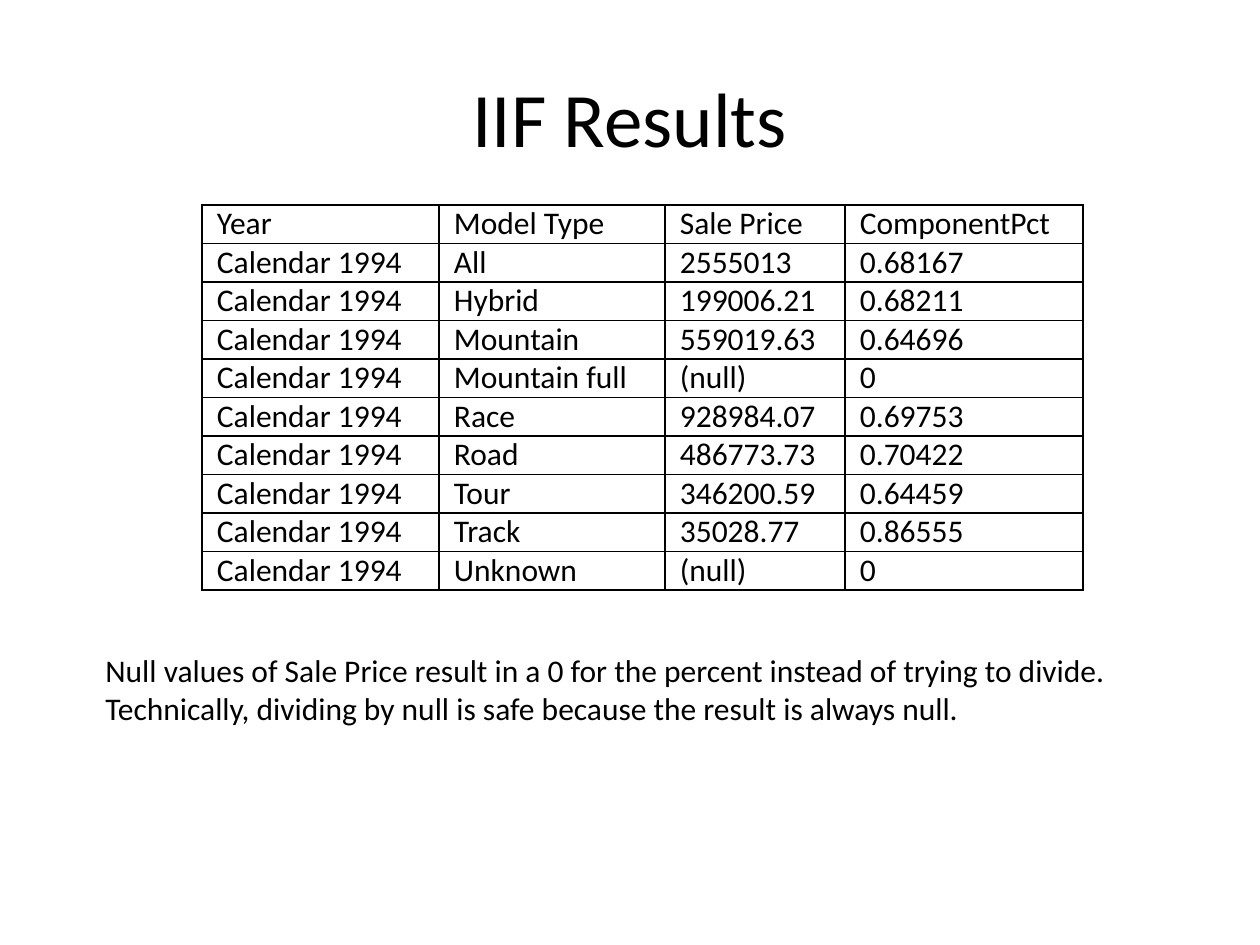
from lxml import etree
from pptx import Presentation, util as u
from pptx.dml.color import RGBColor
from pptx.enum import text
from pptx.oxml.ns import qn

# Content
TITLE = "IIF Results"
YEAR = "Calendar 1994"
HEADER = ("Year", "Model Type", "Sale Price", "ComponentPct")
MODELS = [
    ("All", "2555013", "0.68167"),
    ("Hybrid", "199006.21", "0.68211"),
    ("Mountain", "559019.63", "0.64696"),
    ("Mountain full", "(null)", "0"),
    ("Race", "928984.07", "0.69753"),
    ("Road", "486773.73", "0.70422"),
    ("Tour", "346200.59", "0.64459"),
    ("Track", "35028.77", "0.86555"),
    ("Unknown", "(null)", "0"),
]
NOTES = [
    "Null values of Sale Price result in a 0 for the percent instead of trying to divide.",
    "Technically, dividing by null is safe because the result is always null.",
]

# Layout in px, and formats
PX = u.Inches(1) // 126
SLIDE_SIZE = (1260, 945)
TITLE_BOX = (63, 38, 1134, 157)
TABLE_AT = (202, 205)
COLUMNS = (237, 226, 180, 238)
ROW_HEIGHT = 37
NOTES_BOX = (93, 645, 1032, 90)
COLORS = {"ink": "000000"}
FONT = "Calibri"
CELL_FORMAT = {"margin_left": 15 * PX, "margin_right": 15 * PX,
               "margin_top": 0, "margin_bottom": 0}


def px(values):
    return [value * PX for value in values]


def write(frame, lines, size, alignment=text.PP_ALIGN.LEFT):
    frame.text = "\n".join(lines)
    for paragraph in frame.paragraphs:
        paragraph.alignment = alignment
        font = paragraph.runs[0].font
        for name, value in {"name": FONT, "size": u.Pt(size)}.items():
            setattr(font, name, value)
        font.color.rgb = RGBColor.from_string(COLORS["ink"])


def add_borders(cell):
    properties = cell._tc.get_or_add_tcPr()
    for position, side in enumerate(("lnL", "lnR", "lnT", "lnB")):
        line = etree.Element(qn(f"a:{side}"), w=str(u.Pt(1)))
        fill = etree.SubElement(line, qn("a:solidFill"))
        etree.SubElement(fill, qn("a:srgbClr"), val=COLORS["ink"])
        properties.insert(position, line)


presentation = Presentation()
presentation.slide_width, presentation.slide_height = px(SLIDE_SIZE)
slide = presentation.slides.add_slide(presentation.slide_layouts[5])

# Title
title = slide.shapes.title
title.left, title.top, title.width, title.height = px(TITLE_BOX)
title.text_frame.vertical_anchor = text.MSO_ANCHOR.MIDDLE
write(title.text_frame, [TITLE], 44, text.PP_ALIGN.CENTER)

# Results table
rows = [HEADER] + [(YEAR, *model) for model in MODELS]
table_size = (sum(COLUMNS), ROW_HEIGHT * len(rows))
table = slide.shapes.add_table(
    len(rows), len(COLUMNS), *px(TABLE_AT + table_size)).table
table.first_row = table.horz_banding = False
for column, width in zip(table.columns, px(COLUMNS)):
    column.width = width
for row, values in zip(table.rows, rows):
    row.height = ROW_HEIGHT * PX
    for cell, value in zip(row.cells, values):
        for name, setting in CELL_FORMAT.items():
            setattr(cell, name, setting)
        cell.fill.background()
        add_borders(cell)
        write(cell.text_frame, [value], 18)

# Explanation
notes = slide.shapes.add_textbox(*px(NOTES_BOX)).text_frame
notes.word_wrap = True
notes.auto_size = text.MSO_AUTO_SIZE.SHAPE_TO_FIT_TEXT
write(notes, NOTES, 18)

presentation.save("out.pptx")
